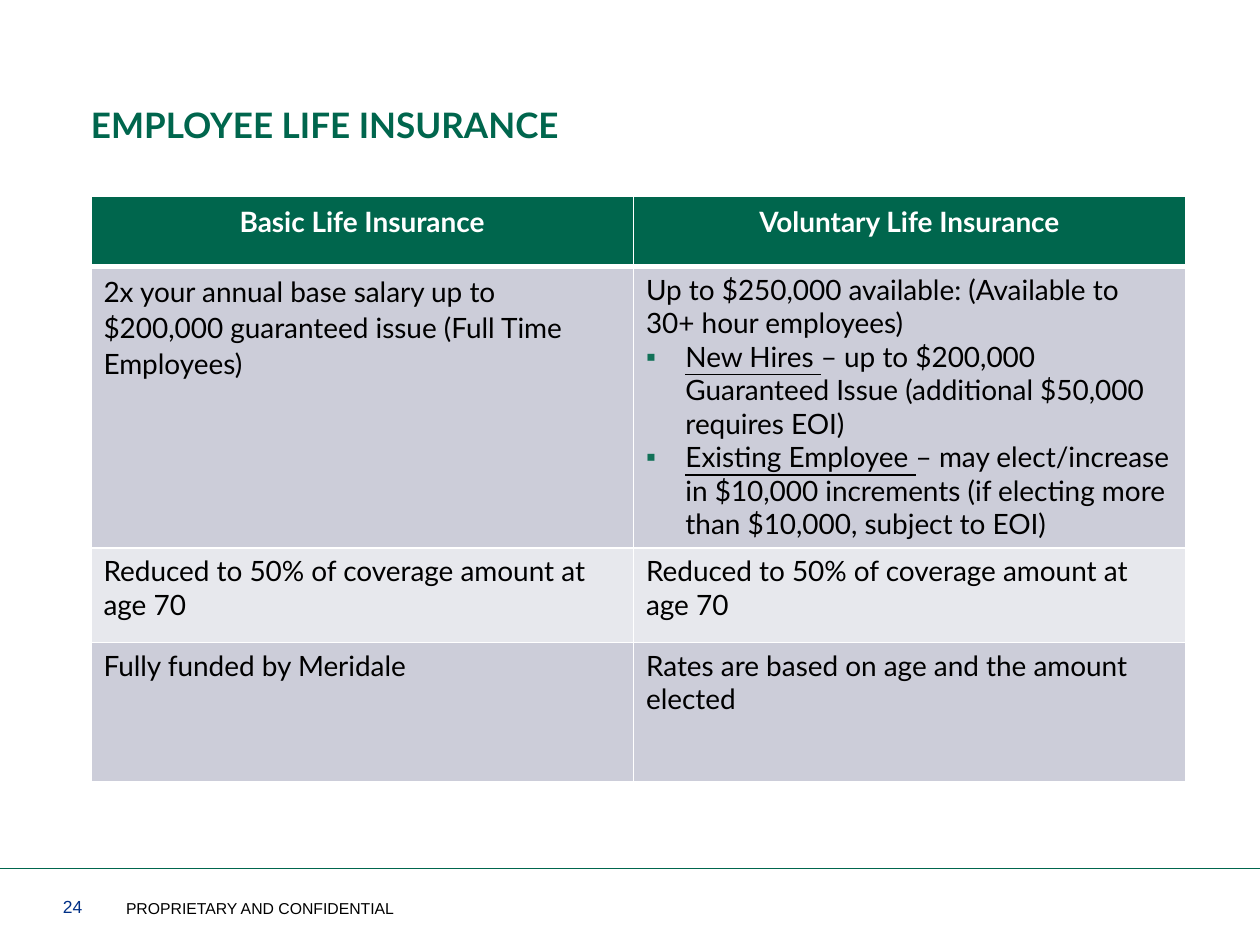
from lxml import etree
from pptx import Presentation
from pptx.dml.color import RGBColor
from pptx.enum import shapes, text
from pptx.oxml import ns
from pptx.util import Pt

GREEN = RGBColor(0x00, 0x66, 0x4D)
BULLET_GREEN = RGBColor(0x11, 0x71, 0x58)
BLUE = RGBColor(0x00, 0x30, 0x87)
BLACK = RGBColor(0x00, 0x00, 0x00)
WHITE = RGBColor(0xFF, 0xFF, 0xFF)
BAND_DARK = RGBColor(0xCC, 0xCD, 0xD9)
BAND_LIGHT = RGBColor(0xE7, 0xE8, 0xED)

HEADINGS = ["Basic Life Insurance", "Voluntary Life Insurance"]
REDUCTION = "Reduced to 50% of coverage amount at age 70"
BASIC = ["2x your annual base salary up to $200,000 guaranteed issue (Full Time Employees)",
         REDUCTION, "Fully funded by Meridale"]
VOLUNTARY_INTRO = "Up to $250,000 available: (Available to 30+ hour employees)"
VOLUNTARY_TERMS = [
    ("New Hires ", "– up to $200,000 Guaranteed Issue (additional $50,000 requires EOI)"),
    ("Existing Employee ", "– may elect/increase in $10,000 increments "
     "(if electing more than $10,000, subject to EOI)"),
]
VOLUNTARY = [VOLUNTARY_INTRO, REDUCTION, "Rates are based on age and the amount elected"]


def set_font(paragraph, name, size, color, bold=False):
    font = paragraph.font
    font.name, font.size, font.bold = name, Pt(size), bold
    font.color.rgb = color


def add_label(slide, box, words, anchor, name, size, color, bold=False):
    frame = slide.shapes.add_textbox(*map(Pt, box)).text_frame
    frame.word_wrap = True
    frame.vertical_anchor = anchor
    frame.margin_left = frame.margin_right = 0
    frame.margin_top = frame.margin_bottom = Pt(3.6)
    frame.text = words
    set_font(frame.paragraphs[0], name, size, color, bold)


def add_bullet(paragraph):
    props = paragraph._p.get_or_add_pPr()
    props.set("marL", str(Pt(22.5)))
    props.set("indent", str(-Pt(22.5)))
    color = etree.SubElement(props, ns.qn("a:buClr"))
    etree.SubElement(color, ns.qn("a:srgbClr"), val=str(BULLET_GREEN))
    etree.SubElement(props, ns.qn("a:buFont"), typeface="Arial")
    etree.SubElement(props, ns.qn("a:buChar"), char="▪")


def style_cell(cell, fill, top=1, bottom=1):
    cell.fill.solid()
    cell.fill.fore_color.rgb = fill
    props = cell._tc.get_or_add_tcPr()
    widths = {"lnL": 1, "lnR": 1, "lnT": top, "lnB": bottom}
    for place, (side, width) in enumerate(widths.items()):
        border = etree.Element(ns.qn(f"a:{side}"), w=str(Pt(width)))
        paint = etree.SubElement(border, ns.qn("a:solidFill"))
        etree.SubElement(paint, ns.qn("a:srgbClr"), val=str(WHITE))
        props.insert(place, border)


def add_voluntary_terms(frame):
    for group, terms in VOLUNTARY_TERMS:
        paragraph = frame.add_paragraph()
        add_bullet(paragraph)
        set_font(paragraph, "Lato", 16, BLACK)
        lead = paragraph.add_run()
        lead.text = group
        lead.font.underline = True
        paragraph.add_run().text = terms


def add_benefits(slide, left, top, widths, heights):
    table = slide.shapes.add_table(len(heights), len(widths), Pt(left), Pt(top),
                                   Pt(sum(widths)), Pt(sum(heights))).table
    for column, width in zip(table.columns, widths):
        column.width = Pt(width)
    for row, height in zip(table.rows, heights):
        row.height = Pt(height)
    for cell, heading in zip(table.rows[0].cells, HEADINGS):
        cell.text = heading
        style_cell(cell, GREEN, bottom=3)
        paragraph = cell.text_frame.paragraphs[0]
        paragraph.alignment = text.PP_ALIGN.CENTER
        paragraph.line_spacing = 1.07
        set_font(paragraph, "Lato", 16, WHITE, True)
    for number, benefits in enumerate(zip(BASIC, VOLUNTARY), 1):
        for cell, benefit in zip(table.rows[number].cells, benefits):
            cell.text = benefit
            style_cell(cell, BAND_DARK if number % 2 else BAND_LIGHT,
                       top=3 if number == 1 else 1)
            set_font(cell.text_frame.paragraphs[0], "Lato", 16, BLACK)
    table.cell(1, 0).text_frame.paragraphs[0].line_spacing = 1.07
    add_voluntary_terms(table.cell(1, 1).text_frame)


def add_footer(slide, top, width):
    rule = slide.shapes.add_connector(shapes.MSO_CONNECTOR.STRAIGHT,
                                      0, Pt(top), Pt(width), Pt(top))
    rule.line.color.rgb = GREEN
    rule.line.width = Pt(0.5)
    etree.SubElement(rule._element.spPr, ns.qn("a:effectLst"))
    bottom = text.MSO_ANCHOR.BOTTOM
    add_label(slide, (36, top + 13.7, 36, 18), "24", bottom, "Arial", 10, BLUE)
    add_label(slide, (72, top + 13.7, 169.2, 18), "PROPRIETARY AND CONFIDENTIAL",
              bottom, "Arial", 9, BLACK)


def main():
    deck = Presentation()
    deck.slide_width, deck.slide_height = Pt(720), Pt(540)
    slide = deck.slides.add_slide(deck.slide_layouts[6])
    add_footer(slide, 496, 720)
    add_label(slide, (52, 55.4, 642, 77.8), "EMPLOYEE LIFE INSURANCE",
              text.MSO_ANCHOR.TOP, "Lato", 20, GREEN, True)
    add_benefits(slide, 52, 112.4, [310, 315.4], [40, 160, 54, 79.6])
    deck.save("out.pptx")


if __name__ == "__main__":
    main()
